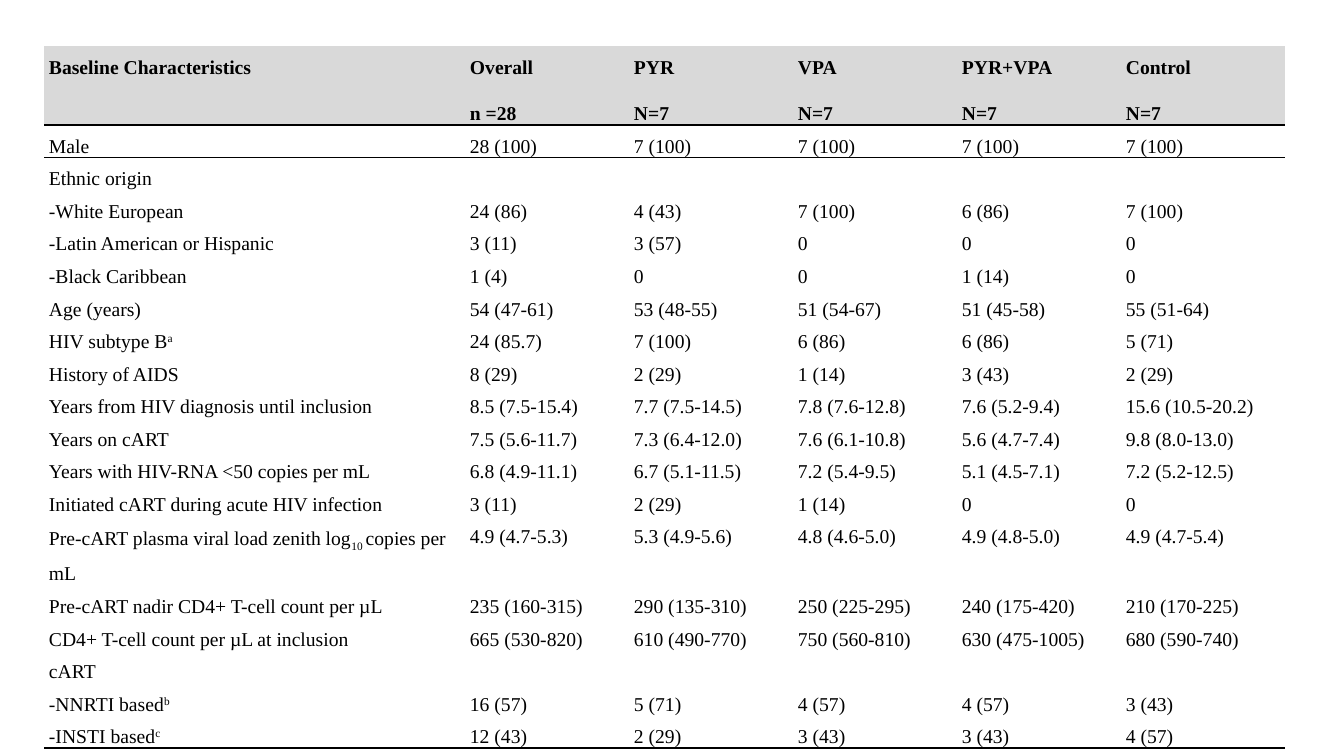
"""Build the slide with the baseline characteristics table."""
from lxml import etree
from pptx import Presentation
from pptx import util as u
from pptx.dml import color
from pptx.oxml import ns

SCALE = 914400 / 100.8
COLORS = {"text": "000000", "rule": "000000", "header": "D9D9D9"}
FONT = "Times New Roman"
SIZE = u.Pt(14)
BASELINES = {"^": "30000", "_": "-25000"}
NO_STYLE = "{2D5ABB26-0587-4C30-8999-92F81FD0307C}"
COLUMN_WIDTHS = [421] + [164] * 5
HEADER_HEIGHT, LINE_HEIGHT, FOOTER_HEIGHT = 78, 32, 163
HEADER = ["Baseline Characteristics", "Overall\nn =28", "PYR\nN=7",
          "VPA\nN=7", "PYR+VPA\nN=7", "Control\nN=7"]
BODY = [
    ["Male", "28 (100)", "7 (100)", "7 (100)", "7 (100)", "7 (100)"],
    ["Ethnic origin", "", "", "", "", ""],
    ["-White European", "24 (86)", "4 (43)", "7 (100)", "6 (86)", "7 (100)"],
    ["-Latin American or Hispanic", "3 (11)", "3 (57)", "0", "0", "0"],
    ["-Black Caribbean", "1 (4)", "0", "0", "1 (14)", "0"],
    ["Age (years)", "54 (47-61)", "53 (48-55)", "51 (54-67)", "51 (45-58)", "55 (51-64)"],
    ["HIV subtype B|^a", "24 (85.7)", "7 (100)", "6 (86)", "6 (86)", "5 (71)"],
    ["History of AIDS", "8 (29)", "2 (29)", "1 (14)", "3 (43)", "2 (29)"],
    ["Years from HIV diagnosis until inclusion", "8.5 (7.5-15.4)",
     "7.7 (7.5-14.5)", "7.8 (7.6-12.8)", "7.6 (5.2-9.4)", "15.6 (10.5-20.2)"],
    ["Years on cART", "7.5 (5.6-11.7)", "7.3 (6.4-12.0)", "7.6 (6.1-10.8)",
     "5.6 (4.7-7.4)", "9.8 (8.0-13.0)"],
    ["Years with HIV-RNA <50 copies per mL", "6.8 (4.9-11.1)",
     "6.7 (5.1-11.5)", "7.2 (5.4-9.5)", "5.1 (4.5-7.1)", "7.2 (5.2-12.5)"],
    ["Initiated cART during acute HIV infection", "3 (11)", "2 (29)", "1 (14)", "0", "0"],
    ["Pre-cART plasma viral load zenith log|_10 |copies per mL", "4.9 (4.7-5.3)",
     "5.3 (4.9-5.6)", "4.8 (4.6-5.0)", "4.9 (4.8-5.0)", "4.9 (4.7-5.4)"],
    ["Pre-cART nadir CD4+ T-cell count per µL", "235 (160-315)",
     "290 (135-310)", "250 (225-295)", "240 (175-420)", "210 (170-225)"],
    ["CD4+ T-cell count per µL at inclusion", "665 (530-820)",
     "610 (490-770)", "750 (560-810)", "630 (475-1005)", "680 (590-740)"],
    ["cART", "", "", "", "", ""],
    ["-NNRTI based|^b", "16 (57)", "5 (71)", "4 (57)", "4 (57)", "3 (43)"],
    ["-INSTI based|^c", "12 (43)", "2 (29)", "3 (43)", "3 (43)", "4 (57)"],
]


def px(length):
    """Turn pixels into EMU."""
    return u.Emu(round(length * SCALE))


def add_span(para, piece, bold):
    """Add one run, raised or lowered when its piece is marked so."""
    span = para.add_run()
    baseline = BASELINES.get(piece[0])
    span.text = piece[1:] if baseline else piece
    span.font.name = FONT
    span.font.size = SIZE
    span.font.bold = bold
    span.font.color.rgb = color.RGBColor.from_string(COLORS["text"])
    if baseline:
        span.font._element.set("baseline", baseline)


def write_cell(cell, content, bold=False):
    """Fill a cell with one paragraph per line of its content."""
    cell.margin_left = cell.margin_right = px(5)
    cell.margin_top = cell.margin_bottom = 0
    for index, line in enumerate(content.split("\n")):
        frame = cell.text_frame
        para = frame.add_paragraph() if index else frame.paragraphs[0]
        if line:
            para.line_spacing = 1.5
            para.space_after = u.Pt(10)
            for piece in line.split("|"):
                add_span(para, piece, bold)
        else:
            etree.SubElement(para._p, ns.qn("a:endParaRPr"), sz="1400")


def rule_cell(cell, side):
    """Draw a thin rule on the top (T) or bottom (B) side of a cell."""
    line = etree.Element(ns.qn(f"a:ln{side}"), w=str(u.Pt(1)))
    fill = etree.SubElement(line, ns.qn("a:solidFill"))
    etree.SubElement(fill, ns.qn("a:srgbClr"), val=COLORS["rule"])
    cell._tc.get_or_add_tcPr().insert(0, line)


def rule_below(table, row):
    """Draw a rule between a row and the next one."""
    for column in range(len(COLUMN_WIDTHS)):
        rule_cell(table.cell(row, column), "B")
        rule_cell(table.cell(row + 1, column), "T")


def add_baseline_table(page):
    """Add the table with its header, body and closing row."""
    footer = [""] * len(HEADER)
    rows = [HEADER, *BODY, footer]
    heights = [HEADER_HEIGHT]
    heights += [LINE_HEIGHT * (2 if "log" in row[0] else 1) for row in BODY]
    heights.append(FOOTER_HEIGHT)
    box = page.shapes.add_table(len(rows), len(HEADER), px(44), px(46),
                                px(sum(COLUMN_WIDTHS)), px(sum(heights)))
    table = box.table
    table.first_row = table.horz_banding = False
    table._tbl.tblPr.find(ns.qn("a:tableStyleId")).text = NO_STYLE
    for column, width in zip(table.columns, COLUMN_WIDTHS):
        column.width = px(width)
    for index, (values, height) in enumerate(zip(rows, heights)):
        table.rows[index].height = px(height)
        for cell, content in zip(table.rows[index].cells, values):
            write_cell(cell, content, bold=index == 0)
            if index == 0:
                cell.fill.solid()
                cell.fill.fore_color.rgb = color.RGBColor.from_string(COLORS["header"])
            else:
                cell.fill.background()
    last = len(rows) - 1
    table.cell(last, 0).merge(table.cell(last, len(HEADER) - 1))
    rule_below(table, 0)
    rule_below(table, last - 1)


def main():
    """Build and save the deck."""
    deck = Presentation()
    deck.slide_width, deck.slide_height = px(1344), px(756)
    page = deck.slides.add_slide(deck.slide_layouts[6])
    add_baseline_table(page)
    deck.save("out.pptx")


if __name__ == "__main__":
    main()
